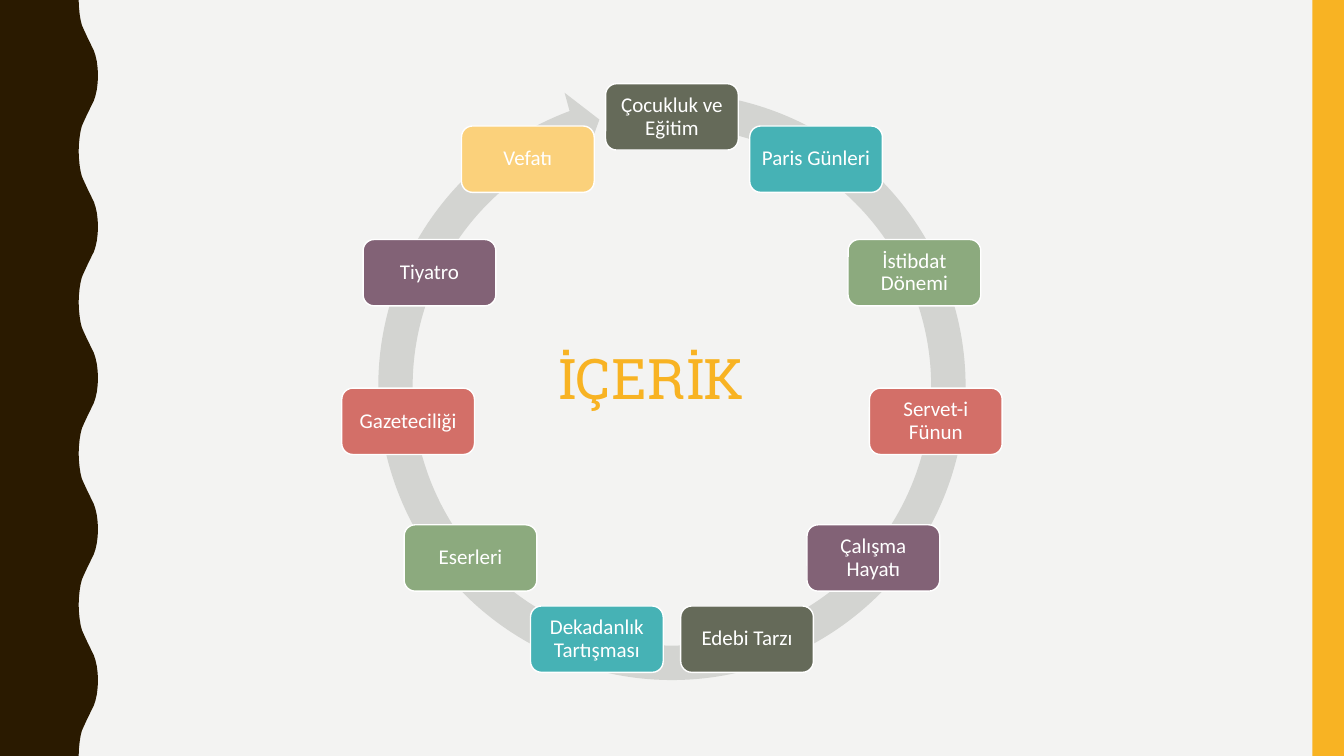
from dataclasses import dataclass
from math import cos, pi, sin

from pptx import Presentation
from pptx.dml.color import RGBColor
from pptx.enum.shapes import MSO_SHAPE
from pptx.enum.text import MSO_ANCHOR, PP_ALIGN
from pptx.util import Pt

WIDE, HIGH = 960, 540
GOLD, WHITE = "F8B323", "FFFFFF"
OLIVE, TEAL, GREEN, CORAL, PLUM = "656A59", "46B2B5", "8CAA7E", "D36F68", "826276"

# Ring of topics: centre, radius and box size
MID_X, MID_Y, RADIUS = 480, 273.9, 190.4
BOX_W, BOX_H = 94.8, 47.4

# Half a wave of the left edge, as x and y
PERIOD = 108
HALF = [
    (56.2, 0), (56.4, 5), (56.9, 10), (57.6, 14.4), (58.5, 18),
    (59.8, 21), (61.2, 24), (62.6, 27), (64.1, 30), (65.5, 33),
    (67, 36), (68.2, 39.6), (69.2, 44), (69.8, 49), (70, 54),
]


@dataclass
class Topic:
    text: str
    fill: str


TOPICS = [
    Topic("Çocukluk ve Eğitim", OLIVE),
    Topic("Paris Günleri", TEAL),
    Topic("İstibdat Dönemi", GREEN),
    Topic("Servet-i Fünun", CORAL),
    Topic("Çalışma Hayatı", PLUM),
    Topic("Edebi Tarzı", OLIVE),
    Topic("Dekadanlık Tartışması", TEAL),
    Topic("Eserleri", GREEN),
    Topic("Gazeteciliği", CORAL),
    Topic("Tiyatro", PLUM),
    Topic("Vefatı", "FBD17B"),
]


def color(code: str) -> RGBColor:
    return RGBColor.from_string(code)


def apply(item, form: dict) -> None:
    for name, value in form.items():
        setattr(item, name, value)


def paint(shape, fill: str, line: str = "") -> None:
    shape.shadow.inherit = False
    shape.fill.solid()
    shape.fill.fore_color.rgb = color(fill)
    if line:
        shape.line.color.rgb = color(line)
        shape.line.width = Pt(1)
    else:
        shape.line.fill.background()


def add_form(slide, kind, x: float, y: float, w: float, h: float):
    return slide.shapes.add_shape(kind, Pt(x), Pt(y), Pt(w), Pt(h))


def write(shape, text: str, size: float, face: str, tint: str):
    par = shape.text_frame.paragraphs[0]
    run = par.add_run()
    run.text = text
    apply(run.font, {"size": Pt(size), "name": face})
    run.font.color.rgb = color(tint)
    return par


def add_wave(slide) -> None:
    back = [(x, PERIOD - y) for x, y in reversed(HALF[1:-1])]
    wave = HALF + back
    edge = [(x, y + top) for top in range(0, HIGH, PERIOD) for x, y in wave]
    edge += [(HALF[0][0], HIGH), (0, HIGH)]
    build = slide.shapes.build_freeform(0, 0)
    build.add_line_segments([(Pt(x), Pt(y)) for x, y in edge], close=True)
    paint(build.convert_to_shape(), "2A1A00")


def add_topic(slide, topic: Topic, angle: float) -> None:
    x = MID_X + RADIUS * sin(angle) - BOX_W / 2
    y = MID_Y - RADIUS * cos(angle) - BOX_H / 2
    box = add_form(slide, MSO_SHAPE.ROUNDED_RECTANGLE, x, y, BOX_W, BOX_H)
    paint(box, topic.fill, WHITE)
    sides = ("left", "top", "right", "bottom")
    apply(box.text_frame, {f"margin_{side}": Pt(4.5) for side in sides})
    apply(box.text_frame, {"word_wrap": True, "vertical_anchor": MSO_ANCHOR.MIDDLE})
    par = write(box, topic.text, 15, "Calibri", WHITE)
    apply(par, {"alignment": PP_ALIGN.CENTER, "line_spacing": 0.9})


def main() -> None:
    deck = Presentation()
    apply(deck, {"slide_width": Pt(WIDE), "slide_height": Pt(HIGH)})
    slide = deck.slides.add_slide(deck.slide_layouts[6])

    # Background and side bands
    slide.background.fill.solid()
    slide.background.fill.fore_color.rgb = color("F3F3F2")
    add_wave(slide)
    paint(add_form(slide, MSO_SHAPE.RECTANGLE, 937.4, 0, 22.6, HIGH), GOLD)

    # Round arrow behind the topics
    arrow = add_form(slide, MSO_SHAPE.CIRCULAR_ARROW, 256.6, 52.6, 446.8, 446.8)
    for i, value in enumerate((0.055, 3.307, 149.571, 167.012, 0.058)):
        arrow.adjustments[i] = value
    paint(arrow, "D3D4D1")

    # Topics, clockwise from the top
    for i, topic in enumerate(TOPICS):
        add_topic(slide, topic, 2 * pi * i / len(TOPICS))

    # Title in the middle
    title = slide.shapes.add_textbox(Pt(391), Pt(242), Pt(181.4), Pt(55.4))
    title.text_frame.word_wrap = True
    write(title, "İÇERİK", 40, "Roboto Slab", GOLD)

    deck.save("out.pptx")


if __name__ == "__main__":
    main()
